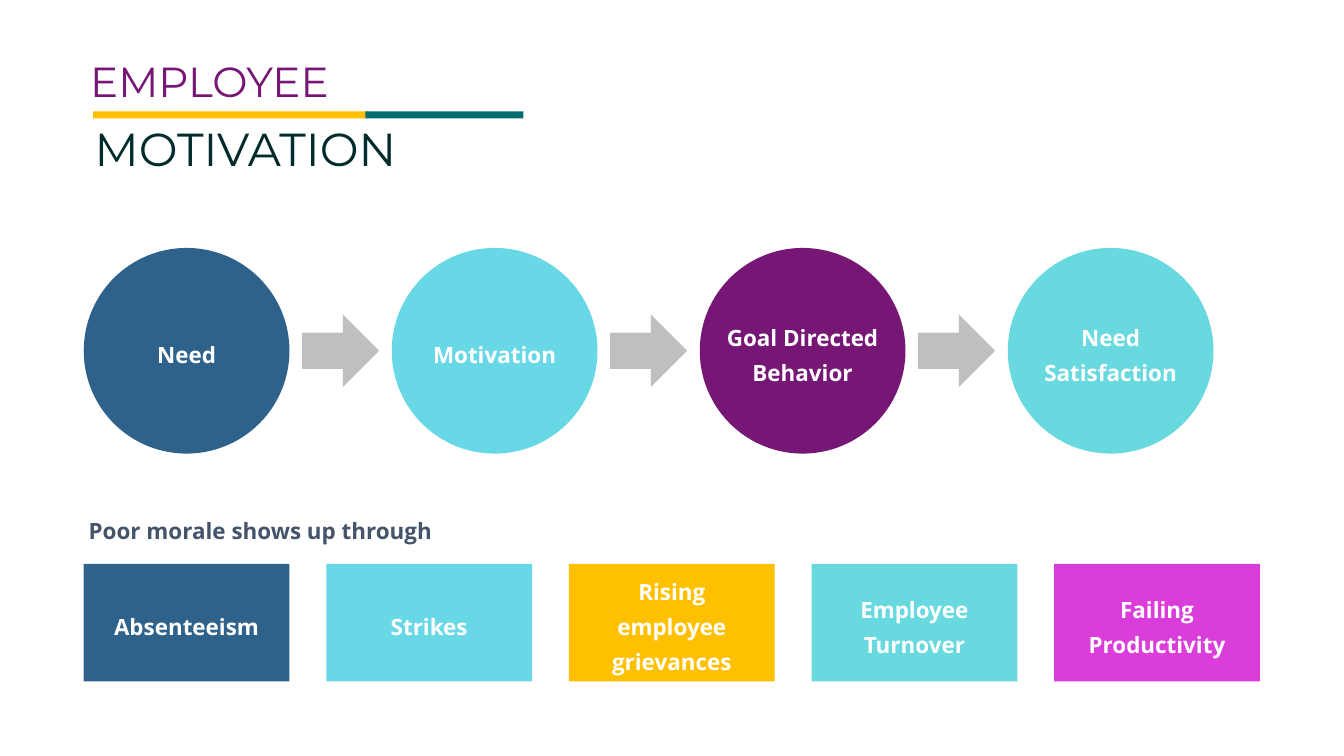
from pptx import Presentation
from pptx.dml.color import RGBColor
from pptx.enum.shapes import MSO_SHAPE
from pptx.enum.text import MSO_ANCHOR, MSO_AUTO_SIZE, PP_ALIGN
from pptx.util import Pt

STEPS = [
    ("Need", "2E628B"),
    ("Motivation", "68D8E7"),
    ("Goal Directed\nBehavior", "761675"),
    ("Need\nSatisfaction", "68D9DF"),
]
SIGNS = [
    ("Absenteeism", "2E628B"),
    ("Strikes", "68D8E7"),
    ("Rising\nemployee\ngrievances", "FFC000"),
    ("Employee\nTurnover", "68D9DF"),
    ("Failing\nProductivity", "DB3DDA"),
]
RULES = [(133.2, 393, "FFC000"), (522, 225.4, "006D6E")]

LEFT, WIDTH = 119.6, 293.8
STEP_TOP, STEP_PITCH = 354.2, 439.9
ARROW_OFFSET, ARROW_WIDTH, ARROW_HEIGHT = 311.8, 110.2, 103.7
SIGN_TOP, SIGN_PITCH, SIGN_HEIGHT = 805.7, 346.5, 167.8


def rgb(value):
    return RGBColor.from_string(value)


def write(holder, text, font, size, color, bold=False, align=PP_ALIGN.LEFT,
          anchor=MSO_ANCHOR.TOP, spacing=None):
    frame = holder.text_frame
    frame.text = text
    frame.word_wrap = False
    frame.auto_size = MSO_AUTO_SIZE.NONE
    frame.vertical_anchor = anchor
    for paragraph in frame.paragraphs:
        paragraph.alignment = align
        paragraph.line_spacing = spacing
        paragraph.font.name = font
        paragraph.font.size = Pt(size)
        paragraph.font.bold = bold
        paragraph.font.color.rgb = rgb(color)


def add_block(slide, kind, left, top, width, height, fill, label=None):
    block = slide.shapes.add_shape(kind, Pt(left), Pt(top), Pt(width), Pt(height))
    block.shadow.inherit = False
    block.fill.solid()
    block.fill.fore_color.rgb = rgb(fill)
    block.line.fill.background()
    if label:
        write(block, label, "Open Sans", 32, "FFFFFF", True, PP_ALIGN.CENTER,
              MSO_ANCHOR.MIDDLE, Pt(50))


def main():
    deck = Presentation()
    deck.slide_width, deck.slide_height = Pt(1919.52), Pt(1080)
    slide = deck.slides.add_slide(deck.slide_layouts[5])

    heading = slide.shapes.title
    heading.left, heading.top = Pt(121.7), Pt(75.6)
    heading.width, heading.height = Pt(389.5), Pt(80)
    write(heading, "EMPLOYEE", "Montserrat", 60, "761675")

    subject = slide.shapes.add_textbox(Pt(128.2), Pt(167.8), Pt(484.6), Pt(87.1))
    write(subject, "MOTIVATION", "Montserrat", 66, "002B2C")

    for left, width, color in RULES:
        add_block(slide, MSO_SHAPE.RECTANGLE, left, 159.1, width, 10.1, color)

    arrow_top = STEP_TOP + (WIDTH - ARROW_HEIGHT) / 2
    for i, (label, color) in enumerate(STEPS):
        left = LEFT + i * STEP_PITCH
        add_block(slide, MSO_SHAPE.OVAL, left, STEP_TOP, WIDTH, WIDTH, color, label)
        if i < len(STEPS) - 1:
            add_block(slide, MSO_SHAPE.RIGHT_ARROW, left + ARROW_OFFSET, arrow_top,
                      ARROW_WIDTH, ARROW_HEIGHT, "BFBFBF")

    caption = slide.shapes.add_textbox(Pt(LEFT), Pt(725.8), Pt(509.8), Pt(53.3))
    write(caption, "Poor morale shows up through", "Open Sans", 32, "44546A", True,
          anchor=MSO_ANCHOR.MIDDLE, spacing=Pt(50))

    for i, (label, color) in enumerate(SIGNS):
        add_block(slide, MSO_SHAPE.RECTANGLE, LEFT + i * SIGN_PITCH, SIGN_TOP,
                  WIDTH, SIGN_HEIGHT, color, label)

    deck.save("out.pptx")


if __name__ == "__main__":
    main()
